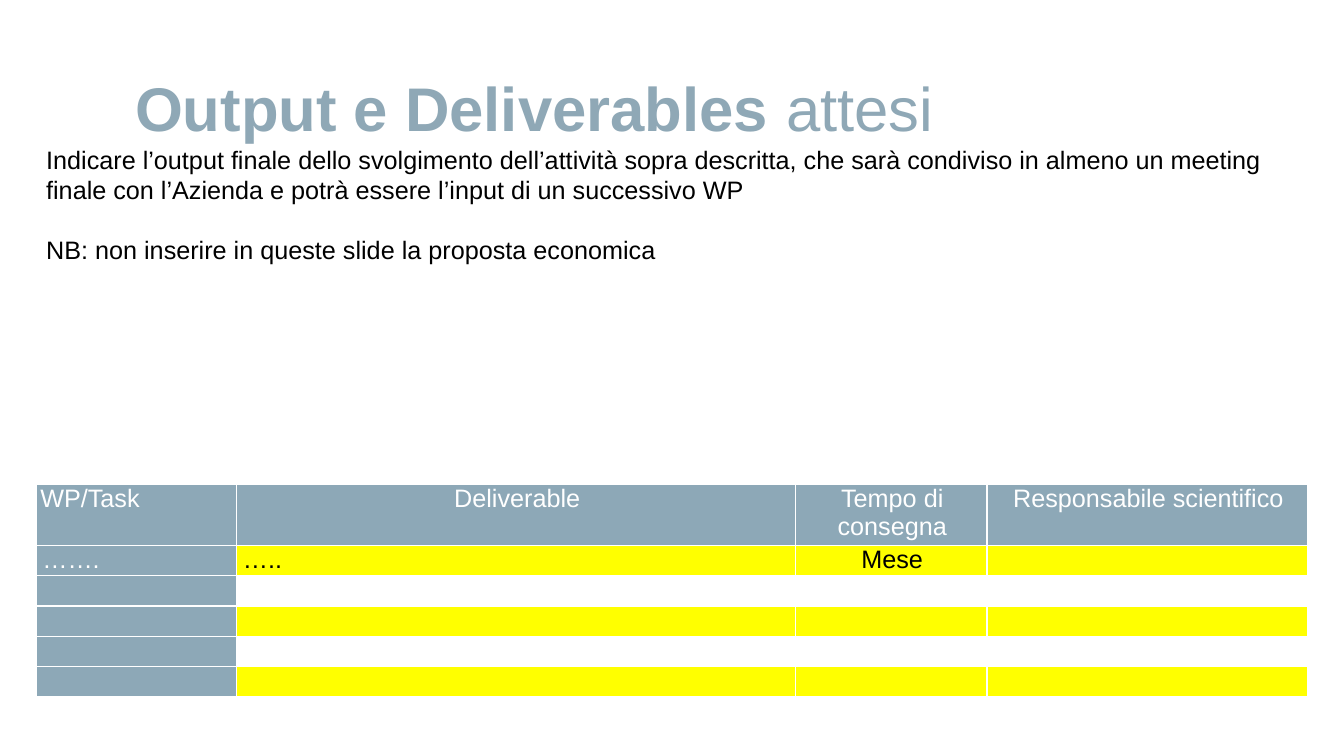
from lxml.etree import SubElement
from pptx import Presentation
from pptx.dml.color import RGBColor
from pptx.enum.text import MSO_ANCHOR as Anchor, PP_ALIGN as Align
from pptx.oxml.ns import qn
from pptx.util import Pt

EMU_PER_PX = 9144  # 100 px to the inch
TITLE_BLUE = RGBColor(0x8F, 0xA8, 0xB6)
HEADER_BLUE = RGBColor(0x8D, 0xA8, 0xB7)
YELLOW = RGBColor(0xFF, 0xFF, 0x00)
WHITE = RGBColor(0xFF, 0xFF, 0xFF)
BLACK = RGBColor(0x00, 0x00, 0x00)

GUIDANCE = [
    "Indicare l’output finale dello svolgimento dell’attività sopra descritta, "
    "che sarà condiviso in almeno un meeting finale con l’Azienda e potrà essere "
    "l’input di un successivo WP",
    "NB: non inserire in queste slide la proposta economica",
]
DELIVERABLES = [
    ["WP/Task", "Deliverable", "Tempo di consegna", "Responsabile scientifico"],
    ["…….", "…..", "Mese", ""],
] + [[""] * 4 for _ in range(4)]
COLUMN_WIDTHS = [199, 554, 190, 318]
ROW_HEIGHTS = [60] + [30] * 5


def px(length):
    return length * EMU_PER_PX


def set_margins(target, left, top, right, bottom):
    target.margin_left, target.margin_top = px(left), px(top)
    target.margin_right, target.margin_bottom = px(right), px(bottom)


def write(paragraph, text, size=18, color=BLACK, bold=False, align=Align.LEFT):
    """Append text to a paragraph; empty text only fixes the line height."""
    paragraph.alignment = align
    if not text:
        SubElement(paragraph._p, qn("a:endParaRPr"), sz=str(size * 100))
        return
    run = paragraph.add_run()
    run.text = text
    font = run.font
    font.name, font.size, font.bold = "Arial", Pt(size), bold
    font.color.rgb = color


def add_borders(cell, color, width):
    properties = cell._tc.get_or_add_tcPr()
    for side in "LRTB":
        line = SubElement(properties, qn(f"a:ln{side}"), w=str(Pt(width)))
        fill = SubElement(line, qn("a:solidFill"))
        SubElement(fill, qn("a:srgbClr"), val=str(color))


class SlideBuilder:
    def __init__(self, presentation):
        self.slide = presentation.slides.add_slide(presentation.slide_layouts[5])

    def title(self, parts, left, top, width, height):
        """Fill the title with (text, bold) parts."""
        title = self.slide.shapes.title
        title.left, title.top = px(left), px(top)
        title.width, title.height = px(width), px(height)
        frame = title.text_frame
        frame.word_wrap = True
        frame.vertical_anchor = Anchor.BOTTOM
        set_margins(frame, 0, 5, 0, 5)
        heading = frame.paragraphs[0]
        heading.line_spacing = 0.9
        for text, bold in parts:
            write(heading, text, size=44, color=TITLE_BLUE, bold=bold)

    def text(self, paragraphs, left, top, width, height, gap):
        box = self.slide.shapes.add_textbox(px(left), px(top), px(width), px(height))
        frame = box.text_frame
        frame.word_wrap = True
        for index, text in enumerate(paragraphs):
            paragraph = frame.add_paragraph() if index else frame.paragraphs[0]
            if index:
                paragraph.space_before = Pt(gap)
            write(paragraph, text)

    def table(self, rows, left, top, widths, heights):
        table = self.slide.shapes.add_table(
            len(rows), len(widths), px(left), px(top), px(sum(widths)), px(sum(heights))
        ).table
        table.first_row = table.horz_banding = False
        for column, width in zip(table.columns, widths):
            column.width = px(width)
        for row, height in zip(table.rows, heights):
            row.height = px(height)
        for r, row in enumerate(rows):
            for c, text in enumerate(row):
                self.cell(table.cell(r, c), r, c, text)

    def cell(self, cell, row, column, text):
        """Style a cell: blue header row and column, yellow bands elsewhere."""
        is_heading = row == 0 or column == 0
        band = YELLOW if row % 2 else WHITE
        centred = column > 1 or (row == 0 and column == 1)
        add_borders(cell, WHITE, 1)
        cell.fill.solid()
        cell.fill.fore_color.rgb = HEADER_BLUE if is_heading else band
        set_margins(cell, 4 if row == column == 0 else 6, 0, 4, 0)
        write(
            cell.text_frame.paragraphs[0],
            text,
            color=WHITE if is_heading else BLACK,
            align=Align.CENTER if centred else Align.LEFT,
        )


def main():
    presentation = Presentation()
    presentation.slide_width, presentation.slide_height = px(1333), px(750)
    builder = SlideBuilder(presentation)
    builder.title([("Output e Deliverables", True), (" attesi", False)], 134, 74, 1070, 75)
    builder.text(GUIDANCE, 36, 138, 1260, 131, gap=21)
    builder.table(DELIVERABLES, 36, 481, COLUMN_WIDTHS, ROW_HEIGHTS)
    presentation.save("out.pptx")


if __name__ == "__main__":
    main()
